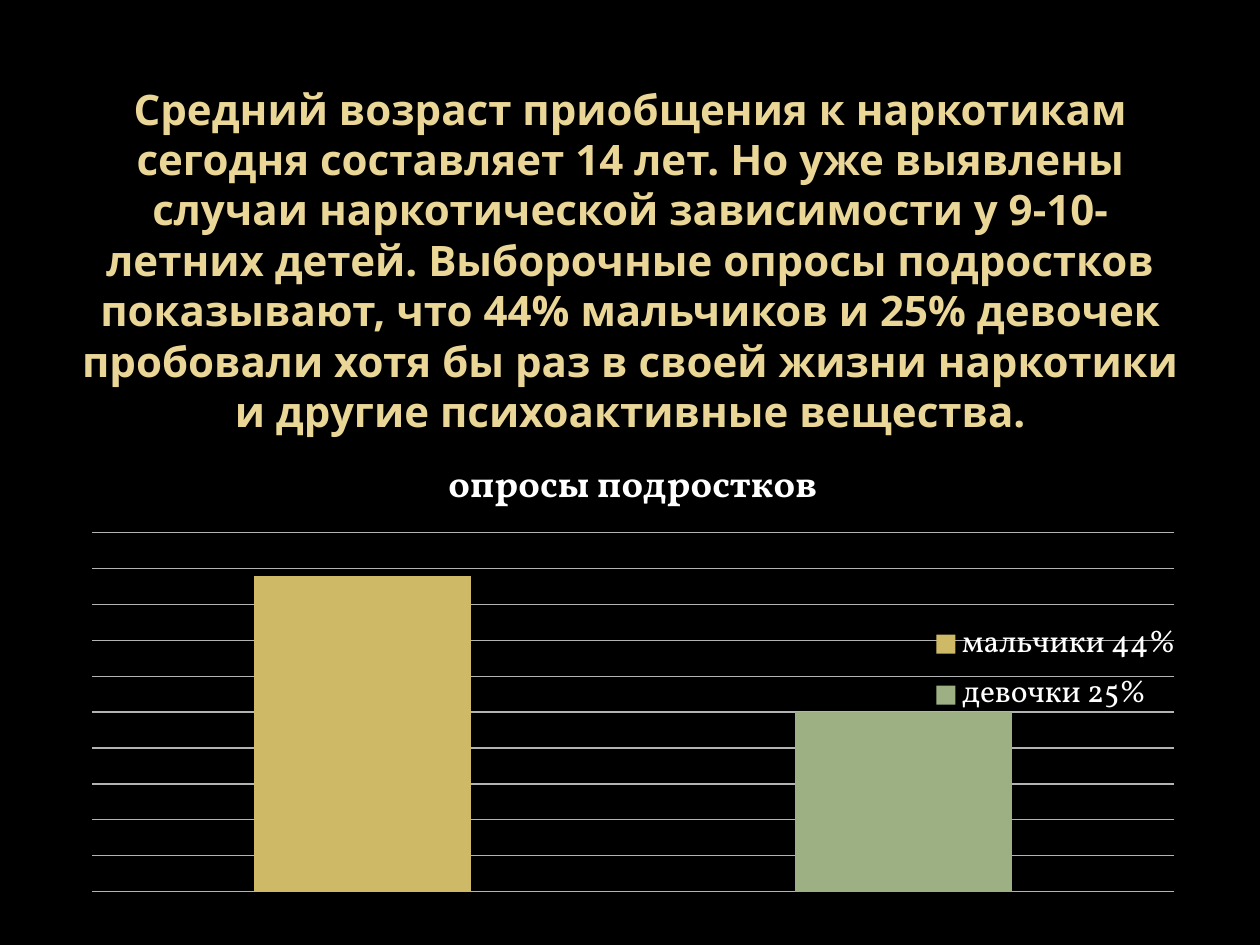
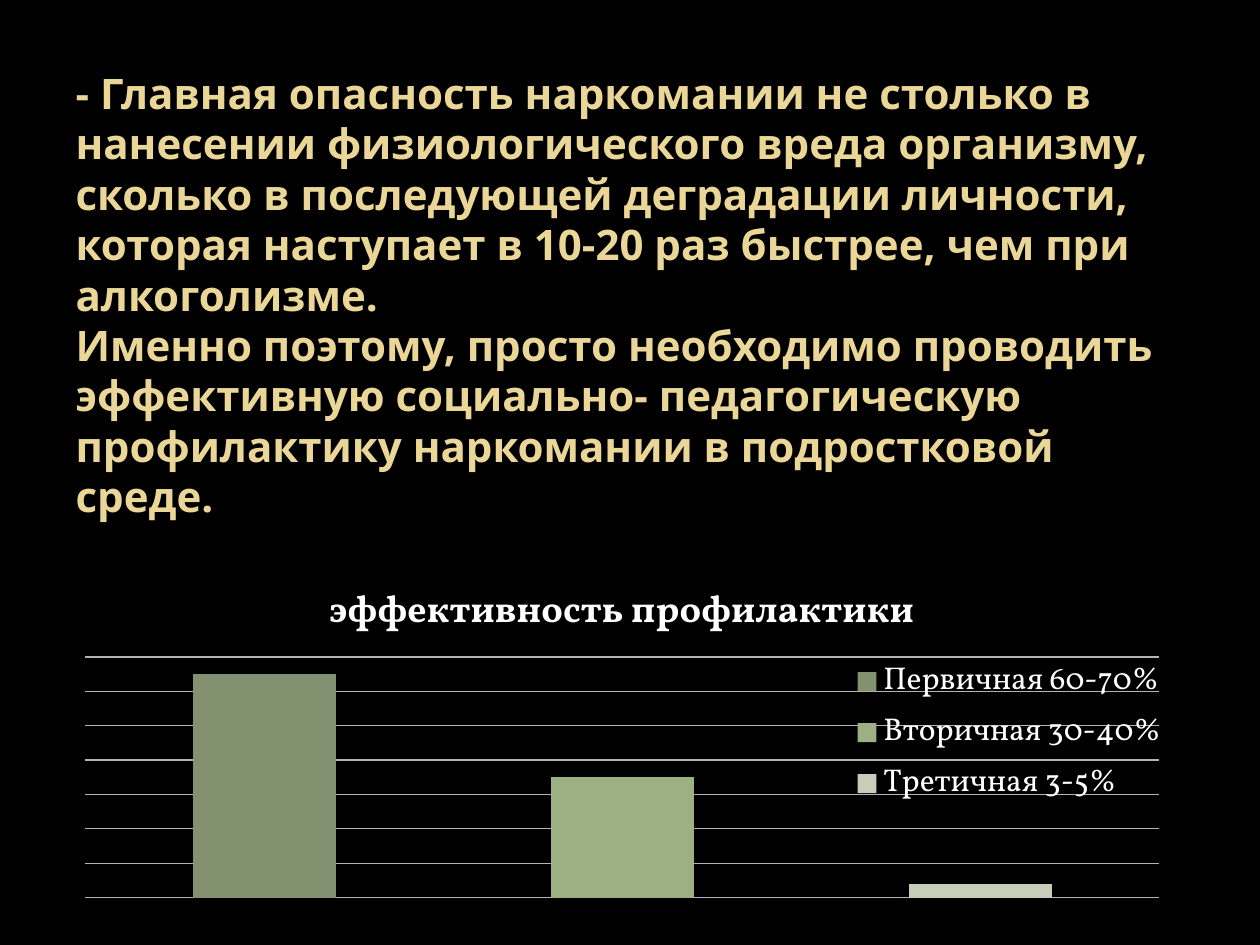
from lxml.etree import SubElement
from pptx import Presentation
from pptx.chart.data import CategoryChartData
from pptx.dml.color import RGBColor
from pptx.enum.chart import XL_CHART_TYPE as ChartType, XL_LEGEND_POSITION as LegendPosition
from pptx.enum.text import MSO_ANCHOR as Anchor, MSO_AUTO_SIZE as AutoSize, PP_ALIGN as Align
from pptx.oxml.ns import qn
from pptx.util import Inches, Pt

BACKGROUND = "000000"
TITLE_COLOR = "EAD696"
CHART_TEXT = "FFFFFF"
GRID = "B3B3B3"
GOLD, GREEN, OLIVE, PALE = "CEB966", "9CB084", "82916F", "C7CDB9"
TITLE_FONT = "Noto Sans"
CHART_FONT = "Vollkorn"


def color(hex_string):
    return RGBColor.from_string(hex_string)


class SlideBuilder:
    """Holds the shared style and the current slide."""

    def __init__(self):
        self.presentation = Presentation()
        self.presentation.slide_width = Inches(10)
        self.presentation.slide_height = Inches(7.5)
        self.slide = None

    def new_slide(self):
        title_only = self.presentation.slide_layouts[5]
        self.slide = self.presentation.slides.add_slide(title_only)
        fill = self.slide.background.fill
        fill.solid()
        fill.fore_color.rgb = color(BACKGROUND)

    def style_font(self, font, name, size, hex_string, bold=False):
        font.name, font.size, font.bold = name, Pt(size), bold
        font.color.rgb = color(hex_string)

    def title(self, paragraphs, height, align, bottom_inset=0.05):
        shape = self.slide.shapes.title
        shape.left, shape.top = Inches(0.5), Inches(0.3)
        shape.width, shape.height = Inches(9), Inches(height)
        frame = shape.text_frame
        frame.word_wrap = True
        frame.auto_size = AutoSize.NONE
        frame.vertical_anchor = Anchor.MIDDLE
        frame.margin_bottom = Inches(bottom_inset)
        for index, text in enumerate(paragraphs):
            paragraph = frame.add_paragraph() if index else frame.paragraphs[0]
            paragraph.alignment = align
            paragraph.line_spacing = Pt(28.8)
            paragraph.space_before = paragraph.space_after = Pt(0)
            run = paragraph.add_run()
            run.text = text
            self.style_font(run.font, TITLE_FONT, 24, TITLE_COLOR, bold=True)

    def column_chart(self, name, bars, box, plot_box, top, step):
        """Draw one stacked series; bars holds (category, value, colour)."""
        data = CategoryChartData(number_format="0%")
        data.categories = [category for category, _, _ in bars]
        data.add_series(name, [value for _, value, _ in bars])
        frame = self.slide.shapes.add_chart(
            ChartType.COLUMN_STACKED, *map(Inches, box), data)
        chart = frame.chart
        self.style_font(chart.font, CHART_FONT, 18, CHART_TEXT)

        # Chart title and legend
        chart.has_title = True
        run = chart.chart_title.text_frame.paragraphs[0].add_run()
        run.text = name
        self.style_font(run.font, CHART_FONT, 21.6, CHART_TEXT, bold=True)
        chart.has_legend = True
        chart.legend.position = LegendPosition.RIGHT
        chart.legend.include_in_layout = True

        # Hidden axes with visible gridlines
        chart.category_axis.visible = False
        axis = chart.value_axis
        axis.visible = False
        axis.minimum_scale, axis.maximum_scale, axis.major_unit = 0, top, step
        axis.has_major_gridlines = True
        line = axis.major_gridlines.format.line
        line.width = Pt(0.75)
        line.color.rgb = color(GRID)

        # Columns, one colour per category
        plot = chart.plots[0]
        plot.gap_width, plot.overlap = 150, 100
        plot.vary_by_categories = True
        for index, (_, _, hex_string) in enumerate(bars):
            fill = plot.series[0].points[index].format.fill
            fill.solid()
            fill.fore_color.rgb = color(hex_string)
        self.place_plot(chart, plot_box)

    def place_plot(self, chart, plot_box):
        """Fix the inner plot area, in fractions of the chart."""
        area = chart._chartSpace.find(".//" + qn("c:plotArea"))
        for old_layout in area.findall(qn("c:layout")):
            area.remove(old_layout)
        layout = SubElement(area, qn("c:layout"))
        area.insert(0, layout)
        manual = SubElement(layout, qn("c:manualLayout"))
        settings = [("layoutTarget", "inner"), ("xMode", "edge"), ("yMode", "edge")]
        settings += zip("xywh", plot_box)
        for tag, value in settings:
            SubElement(manual, qn("c:" + tag)).set("val", str(value))


def main():
    builder = SlideBuilder()

    # Slide 1: survey of teenagers
    builder.new_slide()
    builder.title(
        ["Средний возраст приобщения к наркотикам сегодня составляет 14 лет. "
         "Но уже выявлены случаи наркотической зависимости у 9-10-летних детей. "
         "Выборочные опросы подростков показывают, что 44% мальчиков и 25% девочек "
         "пробовали хотя бы раз в своей жизни наркотики и другие психоактивные вещества."],
        height=3.92, align=Align.CENTER, bottom_inset=0.45)
    builder.column_chart(
        "опросы подростков",
        [("мальчики 44%", 0.44, GOLD), ("девочки 25%", 0.25, GREEN)],
        box=(0.55, 3.44, 8.95, 3.75), plot_box=(0.02, 0.21, 0.96, 0.76),
        top=0.5, step=0.05)

    # Slide 2: effect of prevention
    builder.new_slide()
    builder.title(
        ["- Главная опасность наркомании не столько в нанесении физиологического "
         "вреда организму, сколько в последующей деградации личности, которая "
         "наступает в 10-20 раз быстрее, чем при алкоголизме.",
         "Именно поэтому, просто необходимо проводить эффективную социально- "
         "педагогическую профилактику наркомании в подростковой среде."],
        height=4.07, align=Align.LEFT)
    builder.column_chart(
        "эффективность профилактики",
        [("Первичная 60-70%", 0.65, OLIVE), ("Вторичная 30-40%", 0.35, GREEN),
         ("Третичная 3-5%", 0.04, PALE)],
        box=(0.5, 4.45, 8.88, 2.73), plot_box=(0.02, 0.28, 0.96, 0.7),
        top=0.7, step=0.1)

    builder.presentation.save("out.pptx")


if __name__ == "__main__":
    main()
